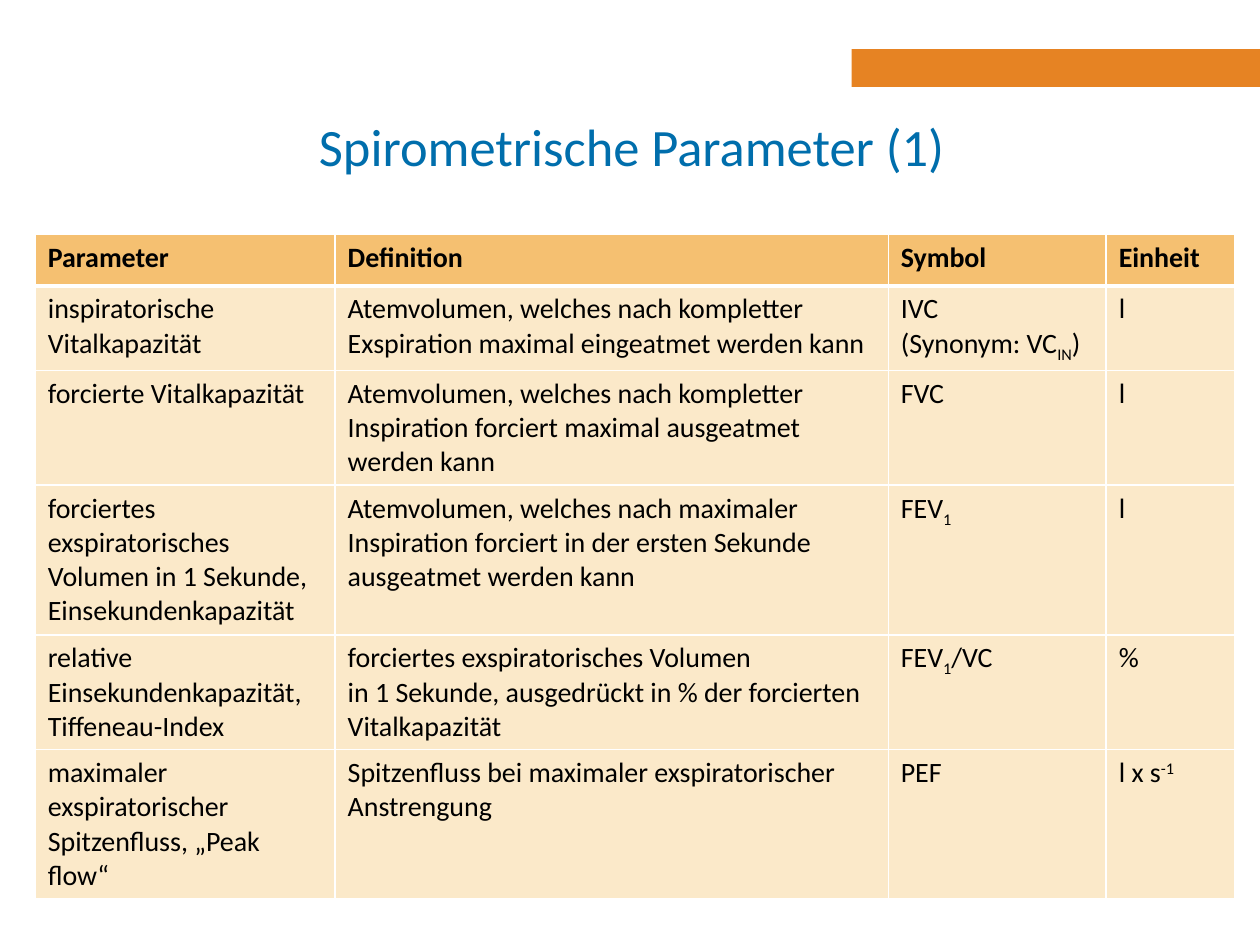
from dataclasses import dataclass

from lxml import etree
from pptx import Presentation
from pptx.dml.color import RGBColor
from pptx.enum import shapes, text
from pptx.oxml import ns
from pptx.util import Inches, Pt

COLORS = {
    "accent": "E68323",
    "title": "006EAC",
    "header": "F5C071",
    "body": "FBE9C9",
    "text": "000000",
    "border": "FFFFFF",
}
FONT = "Calibri"
COL_WIDTHS = (2.38, 4.39, 1.73, 1.02)
ROW_HEIGHTS = (0.41, 0.67, 0.91, 1.19, 0.91, 1.18)
SUB, SUPER = -25, 30


@dataclass
class Run:
    text: str
    baseline: int = 0


@dataclass
class Parameter:
    name: list
    definition: list
    symbol: list
    unit: list


HEADER = Parameter(["Parameter"], ["Definition"], ["Symbol"], ["Einheit"])
PARAMETERS = [
    Parameter(
        ["inspiratorische Vitalkapazität"],
        ["Atemvolumen, welches nach kompletter Exspiration maximal eingeatmet werden kann"],
        ["IVC", [Run("(Synonym: VC"), Run("IN", SUB), Run(")")]],
        ["l"],
    ),
    Parameter(
        ["forcierte Vitalkapazität"],
        ["Atemvolumen, welches nach kompletter Inspiration forciert maximal ausgeatmet werden kann"],
        ["FVC"],
        ["l"],
    ),
    Parameter(
        ["forciertes exspiratorisches", "Volumen in 1 Sekunde,", "Einsekundenkapazität"],
        ["Atemvolumen, welches nach maximaler Inspiration forciert in der ersten Sekunde ausgeatmet werden kann"],
        [[Run("FEV"), Run("1", SUB)]],
        ["l"],
    ),
    Parameter(
        ["relative Einsekundenkapazität,", "Tiffeneau-Index"],
        ["forciertes exspiratorisches Volumen",
         "in 1 Sekunde, ausgedrückt in % der forcierten Vitalkapazität"],
        [[Run("FEV"), Run("1", SUB), Run("/VC")]],
        ["%"],
    ),
    Parameter(
        ["maximaler exspiratorischer", "Spitzenfluss, „Peak flow“"],
        ["Spitzenfluss bei maximaler exspiratorischer", "Anstrengung"],
        ["PEF"],
        [[Run("l x s"), Run("-1", SUPER)]],
    ),
]


def rgb(name: str) -> RGBColor:
    return RGBColor.from_string(COLORS[name])


def add_run(p, run: Run, size: float, color: str, bold: bool = False) -> None:
    r = p.add_run()
    r.text = run.text
    r.font.name = FONT
    r.font.size = Pt(size)
    r.font.bold = bold
    r.font.color.rgb = rgb(color)
    if run.baseline:
        r._r.get_or_add_rPr().set("baseline", str(run.baseline * 1000))


def set_borders(cell, widths: dict[str, float]) -> None:
    tc_pr = cell._tc.get_or_add_tcPr()
    for i, (side, width) in enumerate(widths.items()):
        ln = etree.Element(ns.qn(f"a:ln{side}"), w=str(int(Pt(width))))
        fill = etree.SubElement(ln, ns.qn("a:solidFill"))
        etree.SubElement(fill, ns.qn("a:srgbClr"), val=COLORS["border"])
        tc_pr.insert(i, ln)


def fill_cell(cell, lines: list, row: int) -> None:
    cell.fill.solid()
    cell.fill.fore_color.rgb = rgb("body" if row else "header")
    set_borders(cell, {"L": 1, "R": 1, "T": 3 if row == 1 else 1, "B": 1 if row else 3})
    tf = cell.text_frame
    for i, line in enumerate(lines):
        p = tf.add_paragraph() if i else tf.paragraphs[0]
        for run in [Run(line)] if isinstance(line, str) else line:
            add_run(p, run, 16, "text", bold=row == 0)


def add_bar(s) -> None:
    sp = s.shapes.add_shape(shapes.MSO_SHAPE.RECTANGLE,
                            Inches(6.76), Inches(0.39), Inches(3.24), Inches(0.3))
    sp.shadow.inherit = False
    sp.fill.solid()
    sp.fill.fore_color.rgb = rgb("accent")
    sp.line.fill.background()


def add_title(s, title: str) -> None:
    sp = s.shapes.add_textbox(Inches(1.48), Inches(0.69), Inches(7.07), Inches(0.93))
    tf = sp.text_frame
    tf.word_wrap = True
    tf.vertical_anchor = text.MSO_ANCHOR.MIDDLE
    p = tf.paragraphs[0]
    p.alignment = text.PP_ALIGN.CENTER
    add_run(p, Run(title), 30, "title")


def add_parameter_table(s, rows: list[Parameter]) -> None:
    table = s.shapes.add_table(
        len(rows), len(COL_WIDTHS), Inches(0.28), Inches(1.86),
        Inches(sum(COL_WIDTHS)), Inches(sum(ROW_HEIGHTS))).table
    table.horz_banding = False
    for col, width in zip(table.columns, COL_WIDTHS):
        col.width = Inches(width)
    for i, (row, height, item) in enumerate(zip(table.rows, ROW_HEIGHTS, rows)):
        row.height = Inches(height)
        contents = (item.name, item.definition, item.symbol, item.unit)
        for cell, lines in zip(row.cells, contents):
            fill_cell(cell, lines, i)


def main() -> None:
    prs = Presentation()
    prs.slide_width, prs.slide_height = Inches(10), Inches(7.5)
    s = prs.slides.add_slide(prs.slide_layouts[6])
    add_bar(s)
    add_title(s, "Spirometrische Parameter (1)")
    add_parameter_table(s, [HEADER, *PARAMETERS])
    prs.save("out.pptx")


if __name__ == "__main__":
    main()
